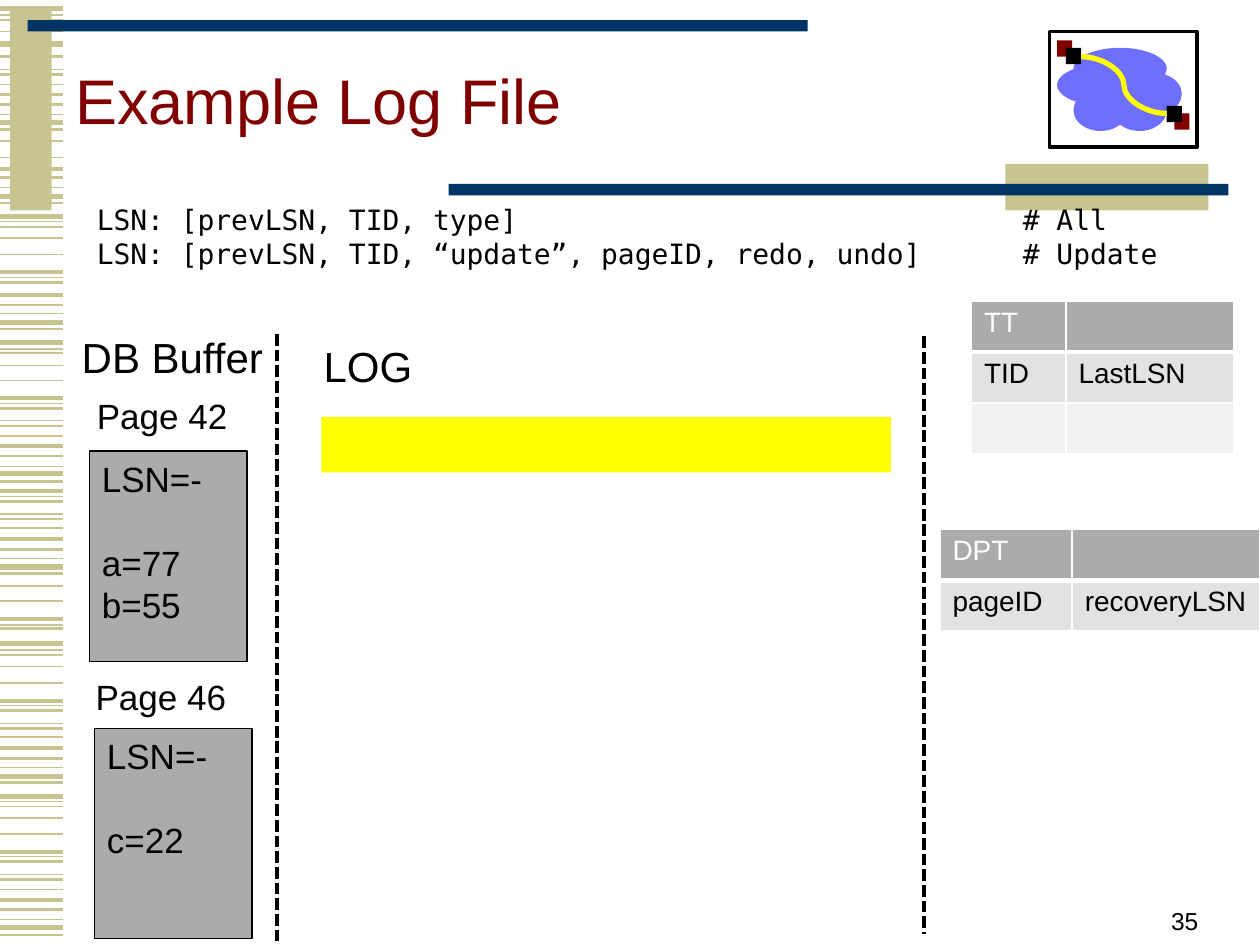
from lxml.etree import SubElement
from pptx import Presentation
from pptx.dml.color import RGBColor
from pptx.enum.dml import MSO_LINE
from pptx.enum.shapes import MSO_CONNECTOR, MSO_SHAPE
from pptx.enum.text import MSO_ANCHOR, PP_ALIGN
from pptx.oxml import parse_xml
from pptx.oxml.ns import nsdecls, qn
from pptx.util import Inches, Pt

THEME = {
    "font": "Arial", "mono": "DejaVu Sans Mono",
    "title": 36, "heading": 24, "body": 20, "small": 16, "number": 14,
    "sand": "C7C48F", "navy": "003366", "maroon": "800000", "cloud": "6F6FFF",
    "yellow": "FFFF00", "black": "000000", "white": "FFFFFF", "gray": "ABABAB",
    "row": "E2E2E2", "row_alt": "F1F1F1",
}

# Content
TITLE = "Example Log File"
SLIDE_NUMBER = "35"
FORMATS = ["LSN: [prevLSN, TID, type]\t# All",
           "LSN: [prevLSN, TID, “update”, pageID, redo, undo]\t# Update"]
HEADINGS = [("DB Buffer", "heading", (0.55, 2.58, 1.65, 0.51)),
            ("Page 42", "body", (0.67, 3.08, 1.25, 0.44)),
            ("Page 46", "body", (0.66, 5.31, 1.25, 0.44)),
            ("LOG", "heading", (2.47, 2.65, 0.91, 0.51))]
PAGES = [(0.71, 3.58, ["LSN=-", "a=77", "b=55"]),
         (0.75, 5.78, ["LSN=-", "c=22"])]
DIVIDERS = [(2.2, 2.65, 7.49), (7.33, 2.67, 7.41)]
TABLES = [
    ((7.71, 2.39), (0.75, 1.33), [["TT", ""], ["TID", "LastLSN"], ["", ""]]),
    ((7.46, 4.2), (1.05, 1.49), [["DPT", ""], ["pageID", "recoveryLSN"]]),
]
ROW_HEIGHT = 0.405

# Decoration: stripe heights on the left edge, by line weight
STRIPES = {
    0.75: [0.12, 0.55, 0.91, 1.49, 1.76, 2.2, 2.49, 2.77, 3.2, 3.34, 3.7, 3.94,
           4.08, 4.43, 4.96, 5.16, 5.6, 5.74, 6.09, 6.36, 6.8, 6.94, 7.3],
    1: [0.16, 0.25, 0.67, 1.12, 1.25, 1.8, 1.89, 2.02, 2.8, 2.9, 3.02, 3.46,
        4.19, 4.65, 4.77, 5.2, 5.29, 5.42, 5.85, 6.4, 6.49, 6.62, 7.06],
    1.5: [0.45, 0.59, 0.83, 1.03, 1.41, 1.61, 2.24, 2.42, 2.61, 3.24, 3.38,
          3.62, 3.82, 3.98, 4.12, 4.36, 4.55, 4.99, 5.64, 5.78, 6.02, 6.21,
          6.84, 6.98, 7.22, 7.42],
    2.25: [0.75, 1.34, 2.16, 2.34, 3.16, 3.54, 3.9, 4.28, 4.91, 5.56, 5.94,
           6.76, 7.14],
    3: [0.07, 0.35, 0.97, 1.56, 1.72, 2.56, 2.72, 3.76, 4.5, 5.11, 6.16, 6.32,
        7.36],
}
BARS = [("sand", (0.08, 0.08, 0.33, 1.59)), ("navy", (0.22, 0.16, 6.19, 0.09)),
        ("sand", (7.98, 1.3, 1.61, 0.37)), ("navy", (3.56, 1.46, 6.19, 0.09))]
CLOUD_PUFFS = [(8.39, 0.51, 0.74), (8.52, 0.38, 0.74), (8.52, 0.71, 0.43),
               (8.83, 0.71, 0.43), (8.83, 0.58, 0.43), (8.95, 0.58, 0.43)]
NODES = [("maroon", 8.39, 0.32), ("black", 8.46, 0.38), ("black", 9.26, 0.84)]


def color(name):
    return RGBColor.from_string(THEME[name])


def add_block(slide, box, fill, kind=MSO_SHAPE.RECTANGLE, line_weight=None):
    shape = slide.shapes.add_shape(kind, *map(Inches, box))
    shape.shadow.inherit = False
    shape.fill.solid()
    shape.fill.fore_color.rgb = color(fill)
    if line_weight:
        shape.line.color.rgb = color("black")
        shape.line.width = Pt(line_weight)
    else:
        shape.line.fill.background()
    return shape


def add_line(slide, start, end, line_color, weight, kind=MSO_CONNECTOR.STRAIGHT):
    line = slide.shapes.add_connector(kind, *map(Inches, start + end))
    line.line.color.rgb = color(line_color)
    line.line.width = Pt(weight)
    SubElement(line._element.spPr, qn("a:effectLst"))
    return line


def write(text_frame, text, size, text_color="black", font="font"):
    text_frame.text = text
    for paragraph in text_frame.paragraphs:
        paragraph.alignment = PP_ALIGN.LEFT
        for run in paragraph.runs:
            run.font.name = THEME[font]
            run.font.size = Pt(THEME[size])
            run.font.color.rgb = color(text_color)


def add_text(slide, box, text, size, text_color="black", font="font", wrap=True):
    text_frame = slide.shapes.add_textbox(*map(Inches, box)).text_frame
    text_frame.word_wrap = wrap
    write(text_frame, text, size, text_color, font)
    return text_frame


def set_borders(cell, weights):
    properties = cell._tc.get_or_add_tcPr()
    for index, (side, weight) in enumerate(weights.items()):
        properties.insert(index, parse_xml(
            f'<a:ln{side} {nsdecls("a")} w="{Pt(weight)}"><a:solidFill>'
            f'<a:srgbClr val="{THEME["white"]}"/></a:solidFill></a:ln{side}>'))


def add_data_table(slide, position, widths, rows):
    size = (sum(widths), ROW_HEIGHT * len(rows))
    table = slide.shapes.add_table(len(rows), len(widths),
                                   *map(Inches, position + size)).table
    for column, width in zip(table.columns, widths):
        column.width = Inches(width)
    for row_index, row in enumerate(rows):
        table.rows[row_index].height = Inches(ROW_HEIGHT)
        for column_index, text in enumerate(row):
            cell = table.cell(row_index, column_index)
            cell.fill.solid()
            cell.fill.fore_color.rgb = color(("gray", "row", "row_alt")[row_index])
            write(cell.text_frame, text, "small", "black" if row_index else "white")
            set_borders(cell, {"L": 1, "R": 1, "T": 3 if row_index == 1 else 1,
                               "B": 1 if row_index else 3})


def add_decoration(slide):
    # Striped left edge and bars
    for weight, heights in STRIPES.items():
        for y in heights:
            add_line(slide, (0, y), (0.5, y), "sand", weight)
    for fill, box in BARS:
        add_block(slide, box, fill)
    # Framed cloud with two linked nodes
    add_block(slide, (8.33, 0.25, 1.17, 0.92), "white", line_weight=2.25)
    add_block(slide, (9.32, 0.9, 0.12, 0.13), "maroon")
    for x, y, width in CLOUD_PUFFS:
        add_block(slide, (x, y, width, 0.33), "cloud", MSO_SHAPE.OVAL)
    for fill, x, y in NODES:
        add_block(slide, (x, y, 0.12, 0.13), fill)
    add_line(slide, (8.58, 0.45), (9.26, 0.9), "yellow", 3, MSO_CONNECTOR.CURVE)


def main():
    presentation = Presentation()
    presentation.slide_width, presentation.slide_height = Inches(10), Inches(7.5)
    slide = presentation.slides.add_slide(presentation.slide_layouts[6])
    add_decoration(slide)

    # Title and slide number
    title = add_text(slide, (0.5, 0.17, 7.83, 1.33), TITLE, "title", "maroon")
    title.vertical_anchor = MSO_ANCHOR.MIDDLE
    title.paragraphs[0].line_spacing = 0.85
    number = add_text(slide, (7.21, 6.97, 2.4, 0.5), SLIDE_NUMBER, "number")
    number.vertical_anchor = MSO_ANCHOR.BOTTOM
    number.paragraphs[0].alignment = PP_ALIGN.RIGHT

    # Log highlight, buffer pages, headings and dividers
    add_block(slide, (2.55, 3.31, 4.52, 0.44), "yellow")
    for x, y, lines in PAGES:
        page = add_block(slide, (x, y, 1.25, 1.67), "gray", line_weight=0.75)
        page.text_frame.vertical_anchor = MSO_ANCHOR.TOP
        write(page.text_frame, "\n".join(lines), "body")
        page.text_frame.paragraphs[1].space_before = Pt(24)
    for text, size, box in HEADINGS:
        add_text(slide, box, text, size, wrap=False)
    for x, top, bottom in DIVIDERS:
        divider = add_line(slide, (x, top), (x, bottom), "black", 2.25)
        divider.line.dash_style = MSO_LINE.SQUARE_DOT

    # Transaction table and dirty page table
    for position, widths, rows in TABLES:
        add_data_table(slide, position, widths, rows)

    # Record formats, with comments aligned at a tab stop
    formats = add_text(slide, (0.67, 1.56, 8.9, 0.64), "\n".join(FORMATS),
                       "small", font="mono")
    for paragraph in formats.paragraphs:
        tabs = SubElement(paragraph._p.get_or_add_pPr(), qn("a:tabLst"))
        SubElement(tabs, qn("a:tab"), pos=str(Inches(7.35)), algn="l")

    presentation.save("out.pptx")


if __name__ == "__main__":
    main()
